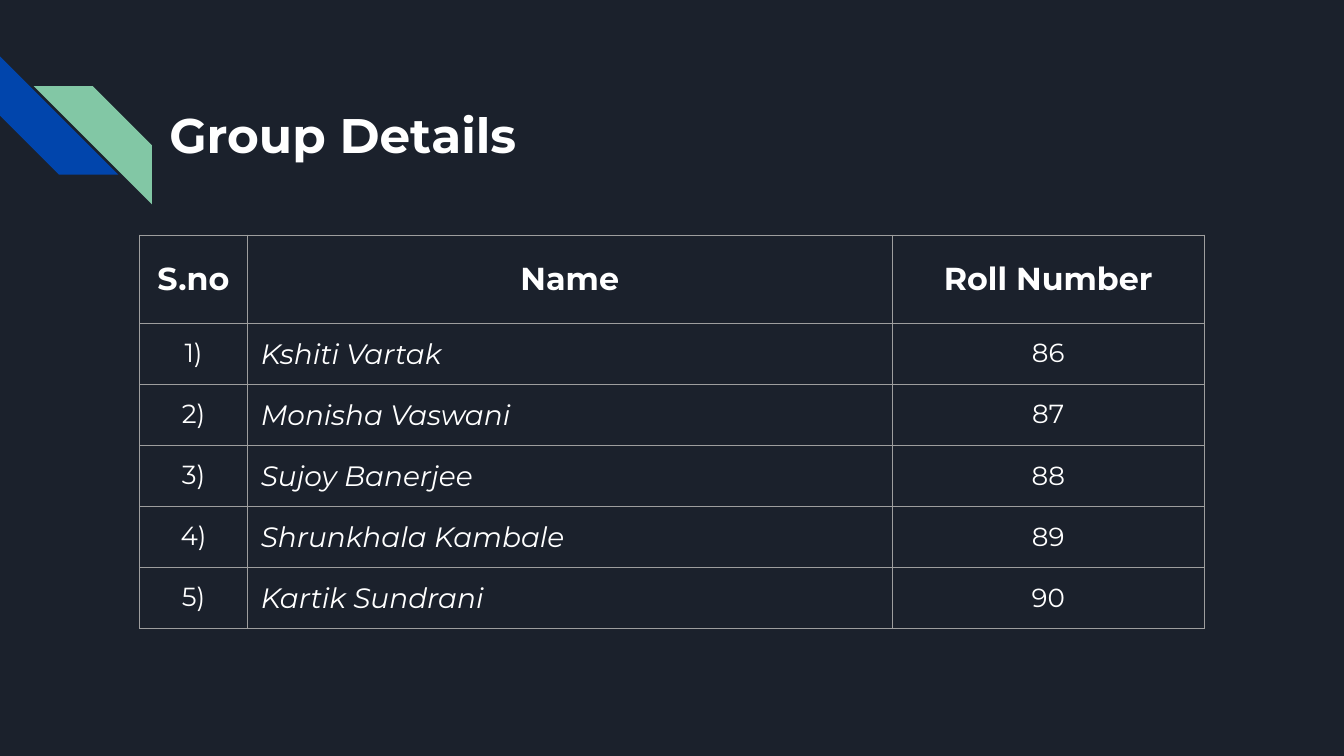
import pptx
import pptx.dml.color
import pptx.enum.shapes
import pptx.enum.text
import pptx.oxml
import pptx.oxml.ns
import pptx.util
from pptx.util import Inches

RGBColor = pptx.dml.color.RGBColor
PP_ALIGN = pptx.enum.text.PP_ALIGN
MSO_ANCHOR = pptx.enum.text.MSO_ANCHOR

NAVY = RGBColor(0x1B, 0x21, 0x2C)
BLUE = RGBColor(0x01, 0x45, 0xAC)
GREEN = RGBColor(0x82, 0xC7, 0xA5)
WHITE = RGBColor(0xFF, 0xFF, 0xFF)
GREY = RGBColor(0x9E, 0x9E, 0x9E)
FONT = "Montserrat"
PAD = 0.1
SLIDE_WIDTH = 10
SLIDE_HEIGHT = SLIDE_WIDTH * 9 / 16

HEADERS = ["S.no", "Name", "Roll Number"]
MEMBERS = [
    ("Kshiti Vartak", 86),
    ("Monisha Vaswani", 87),
    ("Sujoy Banerjee", 88),
    ("Shrunkhala Kambale", 89),
    ("Kartik Sundrani", 90),
]
COL_SHARES = [0.8, 4.8, 2.32]
HEADER_HEIGHT = 0.66


def add_run(p, text, size, bold=False, italic=False):
    """Add one white run to a paragraph."""
    r = p.add_run()
    r.text = text
    r.font.name = FONT
    r.font.size = pptx.util.Pt(size)
    r.font.bold = bold
    r.font.italic = italic
    r.font.color.rgb = WHITE


def set_margins(target):
    """Give a cell or text frame equal margins on all sides."""
    for side in ("left", "top", "right", "bottom"):
        setattr(target, f"margin_{side}", Inches(PAD))


def set_borders(cell):
    """Draw a thin grey line on each side of a cell."""
    tcPr = cell._tc.get_or_add_tcPr()
    for i, side in enumerate(("lnL", "lnR", "lnT", "lnB")):
        ln = pptx.oxml.parse_xml(
            f'<a:{side} {pptx.oxml.ns.nsdecls("a")} w="{pptx.util.Pt(0.75)}">'
            f'<a:solidFill><a:srgbClr val="{GREY}"/></a:solidFill></a:{side}>'
        )
        tcPr.insert(i, ln)


def add_stripes(s, left, top, width, height):
    """Place the two diagonal corner stripes inside the box."""
    size = 0.88
    stripes = [
        (left, top, 270, BLUE),
        (left + width - size, top + height - size, 90, GREEN),
    ]
    for x, y, rotation, color in stripes:
        sp = s.shapes.add_shape(
            pptx.enum.shapes.MSO_SHAPE.DIAGONAL_STRIPE,
            Inches(x), Inches(y), Inches(size), Inches(size),
        )
        sp.rotation = rotation
        sp.shadow.inherit = False
        sp.fill.solid()
        sp.fill.fore_color.rgb = color
        sp.line.fill.background()


def add_title(s, left, top, width, height):
    """Move the title placeholder to the box and fill it."""
    sp = s.shapes.title
    sp.left, sp.top = Inches(left), Inches(top)
    sp.width, sp.height = Inches(width), Inches(height)
    tf = sp.text_frame
    tf.word_wrap = True
    tf.auto_size = pptx.enum.text.MSO_AUTO_SIZE.NONE
    tf.vertical_anchor = MSO_ANCHOR.TOP
    set_margins(tf)
    p = tf.paragraphs[0]
    p.alignment = PP_ALIGN.LEFT
    add_run(p, "Group Details", 26, bold=True)


def add_members_table(s, left, top, width, height):
    """Fill the box with the table of group members."""
    rows = [HEADERS] + [
        (f"{i})", name, str(roll)) for i, (name, roll) in enumerate(MEMBERS, 1)
    ]
    table = s.shapes.add_table(
        len(rows), len(HEADERS),
        Inches(left), Inches(top), Inches(width), Inches(height),
    ).table
    table.horz_banding = False
    for column, share in zip(table.columns, COL_SHARES):
        column.width = Inches(width * share / sum(COL_SHARES))
    row_height = (height - HEADER_HEIGHT) / len(MEMBERS)
    for i, values in enumerate(rows):
        table.rows[i].height = Inches(row_height if i else HEADER_HEIGHT)
        for j, text in enumerate(values):
            cell = table.cell(i, j)
            is_header = i == 0
            is_name = j == 1 and not is_header
            is_middle = is_header or (j == 2 and i >= 3)
            cell.fill.background()
            set_borders(cell)
            set_margins(cell)
            cell.vertical_anchor = MSO_ANCHOR.MIDDLE if is_middle else MSO_ANCHOR.TOP
            p = cell.text_frame.paragraphs[0]
            p.alignment = PP_ALIGN.LEFT if is_name else PP_ALIGN.CENTER
            size = 17 if is_header else 15 if is_name else 14
            add_run(p, text, size, bold=is_header, italic=is_name)


def main():
    """Build the group details slide and save it."""
    prs = pptx.Presentation()
    prs.slide_width, prs.slide_height = Inches(SLIDE_WIDTH), Inches(SLIDE_HEIGHT)
    s = prs.slides.add_slide(prs.slide_layouts[5])
    s.background.fill.solid()
    s.background.fill.fore_color.rgb = NAVY
    add_stripes(s, 0, 0.42, 1.13, 1.1)
    add_members_table(s, 1.04, 1.75, 7.92, 2.91)
    add_title(s, 1.16, 0.68, 7.14, 0.64)
    prs.save("out.pptx")


if __name__ == "__main__":
    main()
